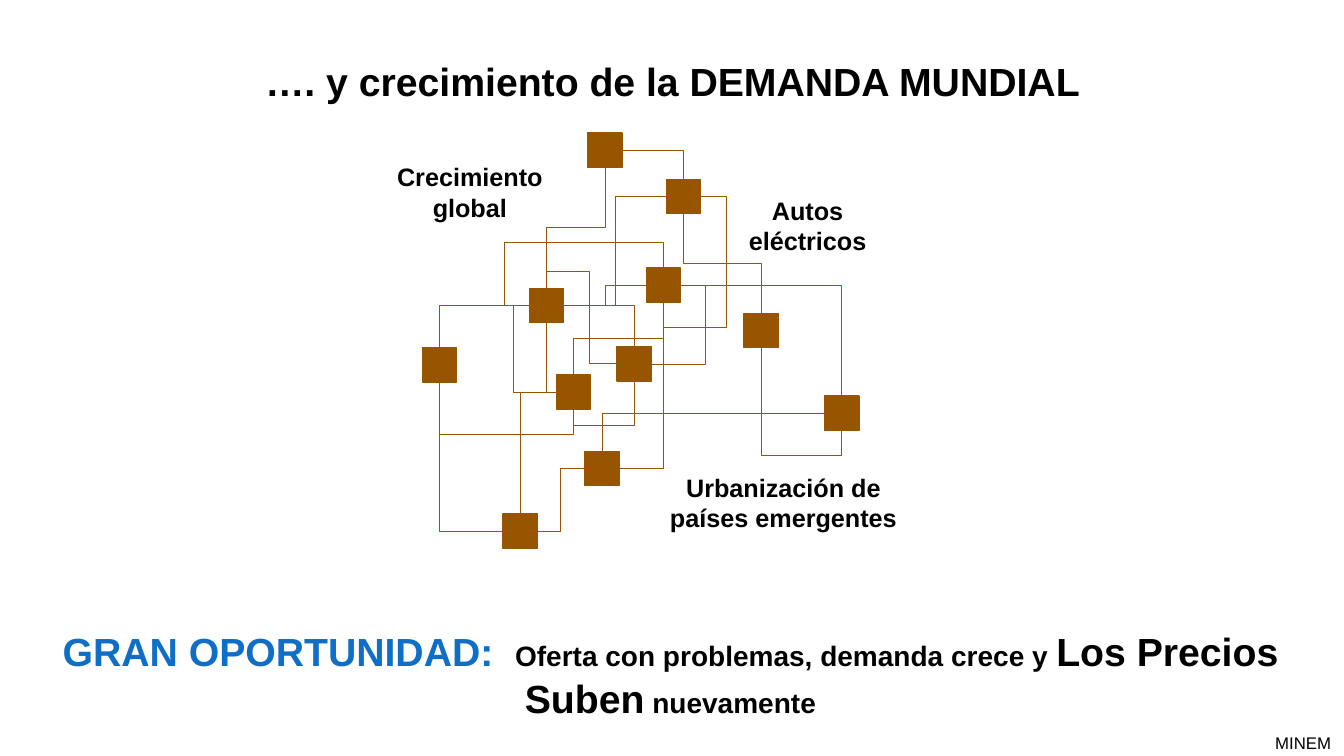
from lxml.etree import SubElement
from pptx import Presentation
from pptx.dml.color import RGBColor
from pptx.enum.shapes import MSO_CONNECTOR, MSO_SHAPE
from pptx.enum.text import MSO_ANCHOR, PP_ALIGN
from pptx.oxml.ns import qn
from pptx.util import Pt

PX = 9144  # 100 px to the inch
BROWN = RGBColor(0x98, 0x55, 0x00)
BLUE = RGBColor(0x0F, 0x6F, 0xC6)
BLACK = RGBColor(0, 0, 0)
SIZE = 34

deck = Presentation()
deck.slide_width, deck.slide_height = 1333 * PX, 750 * PX
slide = deck.slides.add_slide(deck.slide_layouts[6])
shapes = slide.shapes

# Left and top of each square
nodes = {
    "top": (583, 132), "car": (661, 178), "hub": (641, 266),
    "west": (525, 286), "mid": (612, 344), "low": (552, 372),
    "far": (419, 345), "foot": (499, 510), "east": (818, 393),
    "right": (738, 311), "base": (580, 448),
}
for x, y in nodes.values():
    box = shapes.add_shape(MSO_SHAPE.RECTANGLE, x * PX, y * PX, SIZE * PX, SIZE * PX)
    box.shadow.inherit = False
    box.fill.solid()
    box.fill.fore_color.rgb = BROWN
    box.line.color.rgb = BROWN
    box.line.width = Pt(1)

# Node and side at each end, then the x or y of each free bend.
# Links that start at a top or bottom side run downwards.
links = [
    ("west", "r", "hub", "l", 600),
    ("west", "l", "low", "l", 509),
    ("hub", "r", "mid", "r", 700),
    ("car", "l", "west", "r", 610),
    ("foot", "r", "base", "l", 556),
    ("hub", "b", "low", "t", 336),
    ("mid", "b", "low", "b", 422),
    ("top", "b", "west", "t", 226),
    ("car", "b", "right", "t", 261),
    ("right", "b", "east", "b", 452),
    ("far", "b", "low", "b", 431),
    ("low", "l", "west", "b"),
    ("west", "r", "mid", "t"),
    ("top", "r", "car", "t"),
    ("hub", "r", "east", "t"),
    ("east", "l", "hub", "b"),
    ("west", "l", "far", "t"),
    ("low", "l", "foot", "t"),
    ("base", "r", "hub", "b"),
    ("east", "l", "base", "t"),
    ("foot", "l", "far", "b"),
    ("west", "l", "hub", "t", 500, 241),
    ("car", "r", "hub", "b", 720, 325),
    ("mid", "l", "west", "t", 585, 269),
]
HALF = SIZE // 2
sides = {"l": (0, HALF), "r": (SIZE, HALF), "t": (HALF, 0), "b": (HALF, SIZE)}


def port(node, side):
    """Return the middle of one side of a square."""
    return [a + b for a, b in zip(nodes[node], sides[side])]


for start, out, end, into, *bends in links:
    x0, y0 = port(start, out)
    x1, y1 = port(end, into)
    dx, dy = x1 - x0, y1 - y0
    upright = out in "tb"
    ends = [x0, y0, x1, y1]
    if upright:  # the frame lies on its side and is turned by 90 degrees
        cx, cy = (x0 + x1) / 2, (y0 + y1) / 2
        ends = [cx - dy / 2, cy + dx / 2, cx + dy / 2, cy - dx / 2]
    link = shapes.add_connector(MSO_CONNECTOR.ELBOW, *[int(v * PX) for v in ends])
    link.line.color.rgb = BROWN
    link.line.width = Pt(0.5)
    props = link._element.spPr
    SubElement(props, qn("a:effectLst"))
    if upright:
        props.find(qn("a:xfrm")).set("rot", "5400000")
    geom = props.find(qn("a:prstGeom"))
    geom.set("prst", f"bentConnector{len(bends) + 2}")
    guides = geom.find(qn("a:avLst"))
    spans = [(y0, dy)] if upright else [(x0, dx), (y0, dy)]
    for i, (bend, (base, span)) in enumerate(zip(bends, spans), 1):
        ratio = round((bend - base) / span * 100000)
        SubElement(guides, qn("a:gd"), name=f"adj{i}", fmla=f"val {ratio}")

# Place, bold, then runs of text, size and colour
texts = [
    ((23, 34, 1288, 92), True, [("…. y crecimiento de la DEMANDA MUNDIAL", 28, BLACK)]),
    ((355, 157, 222, 67), True, [("Crecimiento global", 18, BLACK)]),
    ((719, 190, 164, 67), True, [("Autos eléctricos", 18, BLACK)]),
    ((646, 465, 262, 67), True, [("Urbanización de países emergentes", 18, BLACK)]),
    ((21, 623, 1288, 92), True, [
        ("GRAN OPORTUNIDAD:  ", 28, BLUE),
        ("Oferta con problemas, demanda crece y ", 20, BLACK),
        ("Los Precios Suben", 28, BLACK),
        (" nuevamente", 20, BLACK),
    ]),
    ((1245, 714, 95, 46), False, [("MINEM", 12, BLACK)]),
]
for place, bold, runs in texts:
    frame = shapes.add_textbox(*[v * PX for v in place]).text_frame
    frame.word_wrap = True
    frame.vertical_anchor = MSO_ANCHOR.MIDDLE
    para = frame.paragraphs[0]
    para.alignment = PP_ALIGN.CENTER
    for words, size, color in runs:
        run = para.add_run()
        run.text = words
        run.font.name = "Arial"
        run.font.size = Pt(size)
        run.font.bold = bold
        run.font.color.rgb = color

deck.save("out.pptx")
